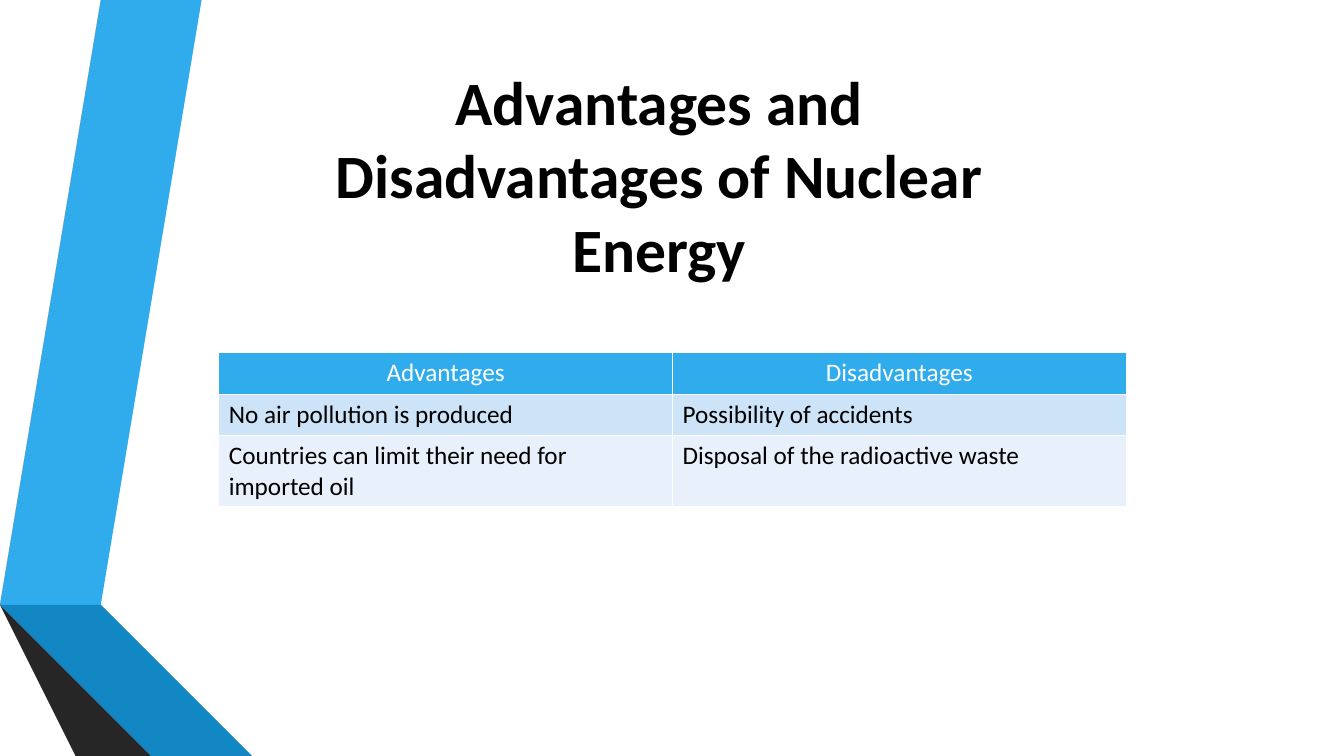
"""Build the slide on advantages and disadvantages of nuclear energy."""
from lxml.etree import SubElement
from pptx import Presentation
from pptx.dml.color import RGBColor
from pptx.enum.text import MSO_ANCHOR as Anchor, MSO_AUTO_SIZE as AutoSize, PP_ALIGN as Align
from pptx.oxml.ns import qn
from pptx.util import Inches, Pt

TITLE = "Advantages and Disadvantages of Nuclear Energy"
ROWS = [
    ("Advantages", "Disadvantages"),
    ("No air pollution is produced", "Possibility of accidents"),
    ("Countries can limit their need for imported oil", "Disposal of the radioactive waste"),
]
ROW_FILLS = ["30ACEC", "CDE3F8", "E8F1FB"]
ROW_HEIGHTS = [0.41, 0.41, 0.7]
COLUMN_WIDTH = 4.5
FONT = "Calibri"
RIBBONS = [
    ("30ACEC", [(0.5, 5.78), (0.77, 5.83), (1.73, 0), (1.45, 0)]),
    ("595959", [(1.39, 0), (1.11, 0), (0.16, 5.73), (0.44, 5.77)]),
    ("262626", [(0.16, 5.73), (1.45, 7.5), (1.51, 7.5)]),
    ("0C5A82", [(0.5, 5.79), (2.08, 7.5), (2.14, 7.5)]),
    ("1287C3", [(0.5, 5.78), (0.5, 5.79), (2.14, 7.5), (2.83, 7.5), (0.77, 5.83)]),
    ("404040", [(2.02, 7.5), (0.48, 5.83), (0.43, 5.77), (0.16, 5.73), (1.51, 7.5)]),
]


def paint(fill, color):
    fill.solid()
    fill.fore_color.rgb = RGBColor.from_string(color)


def style(para, size, color, bold=False):
    font = para.runs[0].font
    font.name, font.size, font.bold = FONT, Pt(size), bold
    paint(font.fill, color)


def add_ribbon(page, color, points):
    builder = page.shapes.build_freeform(*points[0], scale=Inches(1))
    builder.add_line_segments(points[1:], close=True)
    ribbon = builder.convert_to_shape()
    ribbon.shadow.inherit = False
    paint(ribbon.fill, color)
    ribbon.line.fill.background()


def add_borders(cell, color, width):
    properties = cell._tc.get_or_add_tcPr()
    for index, side in enumerate(("lnL", "lnR", "lnT", "lnB")):
        line = SubElement(properties, qn(f"a:{side}"), w=str(Pt(width)))
        SubElement(SubElement(line, qn("a:solidFill")), qn("a:srgbClr"), val=color)
        properties.insert(index, line)


def add_comparison(page):
    columns = len(ROWS[0])
    table = page.shapes.add_table(
        len(ROWS), columns, Inches(2.17), Inches(3.5),
        Inches(COLUMN_WIDTH * columns), Inches(sum(ROW_HEIGHTS))).table
    for column in table.columns:
        column.width = Inches(COLUMN_WIDTH)
    for r, texts in enumerate(ROWS):
        table.rows[r].height = Inches(ROW_HEIGHTS[r])
        for c, text in enumerate(texts):
            cell = table.cell(r, c)
            cell.text = text
            para = cell.text_frame.paragraphs[0]
            para.alignment = Align.LEFT if r else Align.CENTER
            style(para, 18, "000000" if r else "FFFFFF")
            paint(cell.fill, ROW_FILLS[r])
            add_borders(cell, "FFFFFF", 1)


def add_title(page):
    title = page.shapes.title
    title.left, title.top = Inches(2.75), Inches(0.58)
    title.width, title.height = Inches(7.58), Inches(2.32)
    frame = title.text_frame
    frame.text = TITLE
    frame.word_wrap = True
    frame.auto_size = AutoSize.NONE
    frame.vertical_anchor = Anchor.TOP
    para = frame.paragraphs[0]
    para.alignment = Align.CENTER
    style(para, 44, "000000", bold=True)


def main():
    deck = Presentation()
    deck.slide_width, deck.slide_height = Inches(13.33), Inches(7.5)
    page = deck.slides.add_slide(deck.slide_layouts[5])
    paint(page.background.fill, "FFFFFF")
    for color, points in RIBBONS:
        add_ribbon(page, color, points)
    add_comparison(page)
    add_title(page)
    deck.save("out.pptx")


if __name__ == "__main__":
    main()
